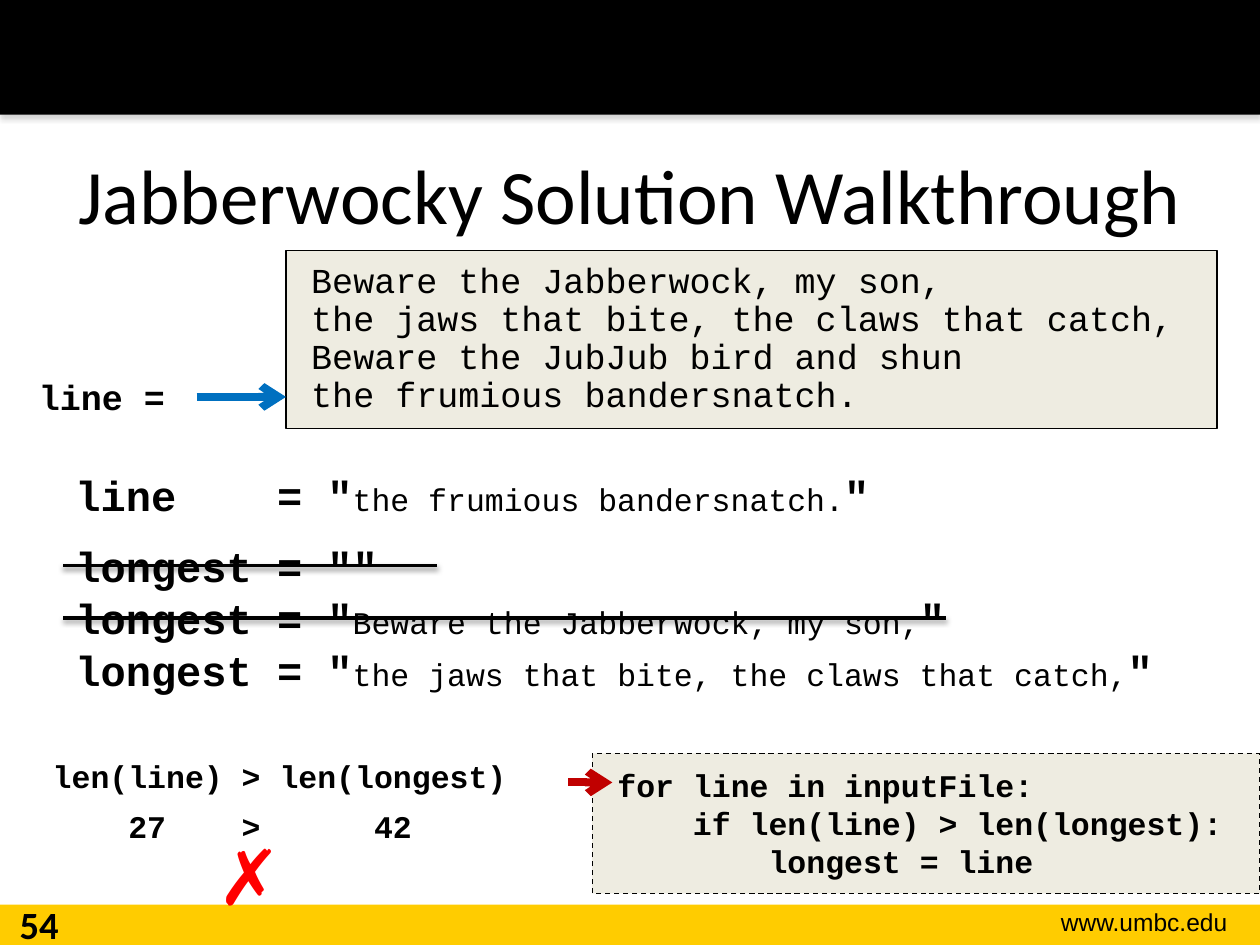
"""Build the Jabberwocky walkthrough slide, laid out on a grid of 100 columns by 75 rows."""
from lxml.etree import SubElement
from pptx import Presentation
from pptx.dml.color import RGBColor
from pptx.enum.dml import MSO_LINE
from pptx.enum.shapes import MSO_CONNECTOR, MSO_SHAPE
from pptx.enum.text import MSO_ANCHOR, MSO_AUTO_SIZE, PP_ALIGN
from pptx.oxml.ns import qn
from pptx.util import Inches, Pt

COLORS = {"ink": "000000", "gold": "FFCC00", "paper": "EEECE1", "gray": "808080",
          "red": "FF0000", "dark_red": "C00000", "blue": "0070C0"}
CODE, BODY, WEB = "Courier New", "Calibri", "Arial"
COLUMNS, ROWS = 100, 75

TITLE = "Jabberwocky Solution Walkthrough"
POEM = ["Beware the Jabberwock, my son,", "the jaws that bite, the claws that catch,",
        "Beware the JubJub bird and shun", "the frumious bandersnatch."]
LOOP = ["for line in inputFile:", "    if len(line) > len(longest):", "        longest = line"]
LONGEST_VALUES = ["", POEM[0], POEM[1]]
STRIKE_ENDS = [34.7, 75.1]
COMPARISON = ["len(line) > len(longest)", "\t27\t>\t42"]
COMPARISON_TABS = [4, 10, 17]

LEFT, CODE_WIDTH, CODE_HEIGHT = 5, 89.1, 5
LONGEST_TOP, LONGEST_STEP = 42.4, 4.15
COMPARISON_TOP, COMPARISON_STEP = 59.6, 4

presentation = Presentation()
presentation.slide_width, presentation.slide_height = Inches(10), Inches(7.5)
slide = presentation.slides.add_slide(presentation.slide_layouts[6])
CELL_WIDTH = presentation.slide_width / COLUMNS
CELL_HEIGHT = presentation.slide_height / ROWS


def place(*lengths):
    """Turn alternating columns and rows into slide lengths."""
    return [round(length * (CELL_HEIGHT if index % 2 else CELL_WIDTH))
            for index, length in enumerate(lengths)]


def color(name):
    return RGBColor.from_string(COLORS[name])


def set_effects(shape, shadow=None):
    """Give the shape an effect list, empty or with a shadow of (color, alpha, blur, distance)."""
    effects = SubElement(shape._element.spPr, qn("a:effectLst"))
    if shadow:
        name, alpha, blur, distance = shadow
        outer = SubElement(effects, qn("a:outerShdw"), blurRad=str(Pt(blur)), dist=str(Pt(distance)),
                           dir="5400000", rotWithShape="0")
        tone = SubElement(outer, qn("a:srgbClr"), val=COLORS[name])
        SubElement(tone, qn("a:alpha"), val=str(alpha * 1000))


def add_text(shape, paragraphs, size=18, font=CODE, ink="ink", bold=False, align=PP_ALIGN.LEFT,
             anchor=MSO_ANCHOR.TOP, spacing=None, tabs=(), margin=None, grow=True):
    """Write paragraphs, each a string or a list of (text, size, bold) runs."""
    frame = shape.text_frame
    frame.word_wrap, frame.vertical_anchor = True, anchor
    frame.auto_size = MSO_AUTO_SIZE.SHAPE_TO_FIT_TEXT if grow else MSO_AUTO_SIZE.NONE
    if margin:
        frame.margin_left = frame.margin_right = Inches(margin[0])
        frame.margin_top = frame.margin_bottom = Inches(margin[1])
    for index, content in enumerate(paragraphs):
        paragraph = frame.add_paragraph() if index else frame.paragraphs[0]
        paragraph.alignment = align
        if spacing:
            paragraph.line_spacing = spacing
        if tabs:
            stops = SubElement(paragraph._p.get_or_add_pPr(), qn("a:tabLst"))
            for character in tabs:
                SubElement(stops, qn("a:tab"), pos=str(Pt(character * size * 0.6)), algn="l")
        runs = [(content, size, bold)] if isinstance(content, str) else content
        for words, run_size, run_bold in runs:
            run = paragraph.add_run()
            run.text = words
            run.font.name, run.font.size, run.font.bold = font, Pt(run_size), run_bold
            run.font.color.rgb = color(ink)
    return shape


def add_label(area, paragraphs, **text_format):
    return add_text(slide.shapes.add_textbox(*place(*area)), paragraphs, **text_format)


def add_box(area, fill, outline=None, dash=None, shadow=None):
    box = slide.shapes.add_shape(MSO_SHAPE.RECTANGLE, *place(*area))
    box.fill.solid()
    box.fill.fore_color.rgb = color(fill)
    if outline:
        box.line.color.rgb, box.line.width = color(outline), Pt(0.75)
        if dash:
            box.line.dash_style = dash
    else:
        box.line.fill.background()
    if shadow:
        set_effects(box, shadow)
    else:
        box.shadow.inherit = False
    return box


def add_line(start, end, row, ink, width, arrow=False, shadow=None):
    line = slide.shapes.add_connector(MSO_CONNECTOR.STRAIGHT, *place(start, row, end, row))
    line.line.color.rgb, line.line.width = color(ink), Pt(width)
    if arrow:
        SubElement(line.line._get_or_add_ln(), qn("a:tailEnd"), type="arrow")
    set_effects(line, shadow)
    return line


def add_assignment(row, name, value, **text_format):
    runs = [(f'{name}= "', 24, True), (value, 18, False), ('"', 24, True)]
    add_label((LEFT, row, CODE_WIDTH, CODE_HEIGHT), [[run for run in runs if run[0]]],
              size=24, **text_format)


add_box((0, 71.8, COLUMNS, 3.2), "gold")
add_box((0, 0, COLUMNS, 9.1), "ink", shadow=("gray", 35, 3.1, 1.8))
add_label((78.5, 71.5, 19.9, 3.4), ["www.umbc.edu"], size=14, font=WEB, align=PP_ALIGN.RIGHT)
add_label((0, 71, 6.2, 4), ["54"], size=22, font=BODY, bold=True, align=PP_ALIGN.CENTER, grow=False)
add_label((5, 9.1, 90, 12.5), [TITLE], size=44, font=BODY, align=PP_ALIGN.CENTER,
          anchor=MSO_ANCHOR.MIDDLE, grow=False)

add_text(add_box((22.7, 19.9, 73.9, 14.1), "paper", "ink"), POEM, size=20, spacing=0.9,
         margin=(0.2, 0.1))
line_label = add_label((2.1, 29.3, 13.5, 4.4), ["line ="], size=20, bold=True)
add_line(15.6, 22.7, 31.5, "blue", 4.5, arrow=True).begin_connect(line_label, 3)

add_assignment(36.8, "line\t", POEM[3], tabs=[8])
for index, value in enumerate(LONGEST_VALUES):
    add_assignment(LONGEST_TOP + index * LONGEST_STEP, "longest ", value)
for index, end in enumerate(STRIKE_ENDS):
    add_line(LEFT, end, LONGEST_TOP + index * LONGEST_STEP + CODE_HEIGHT / 2, "ink", 2,
             shadow=("ink", 38, 3.1, 1.6))

for index, words in enumerate(COMPARISON):
    add_label((3.2, COMPARISON_TOP + index * COMPARISON_STEP, 38.9, 4), [words], bold=True,
              tabs=COMPARISON_TABS if "\t" in words else ())
add_label((14.2, 65.3, 11.3, 8.4), ["✗"], size=44, font=BODY, ink="red", bold=True,
          align=PP_ALIGN.CENTER)

add_text(add_box((47, 59.8, 53, 11.1), "paper", "ink", dash=MSO_LINE.DASH), LOOP, bold=True,
         margin=(0.2, 0.1))
add_line(45.1, 48.6, 62.1, "dark_red", 4.5, arrow=True)

presentation.save("out.pptx")
